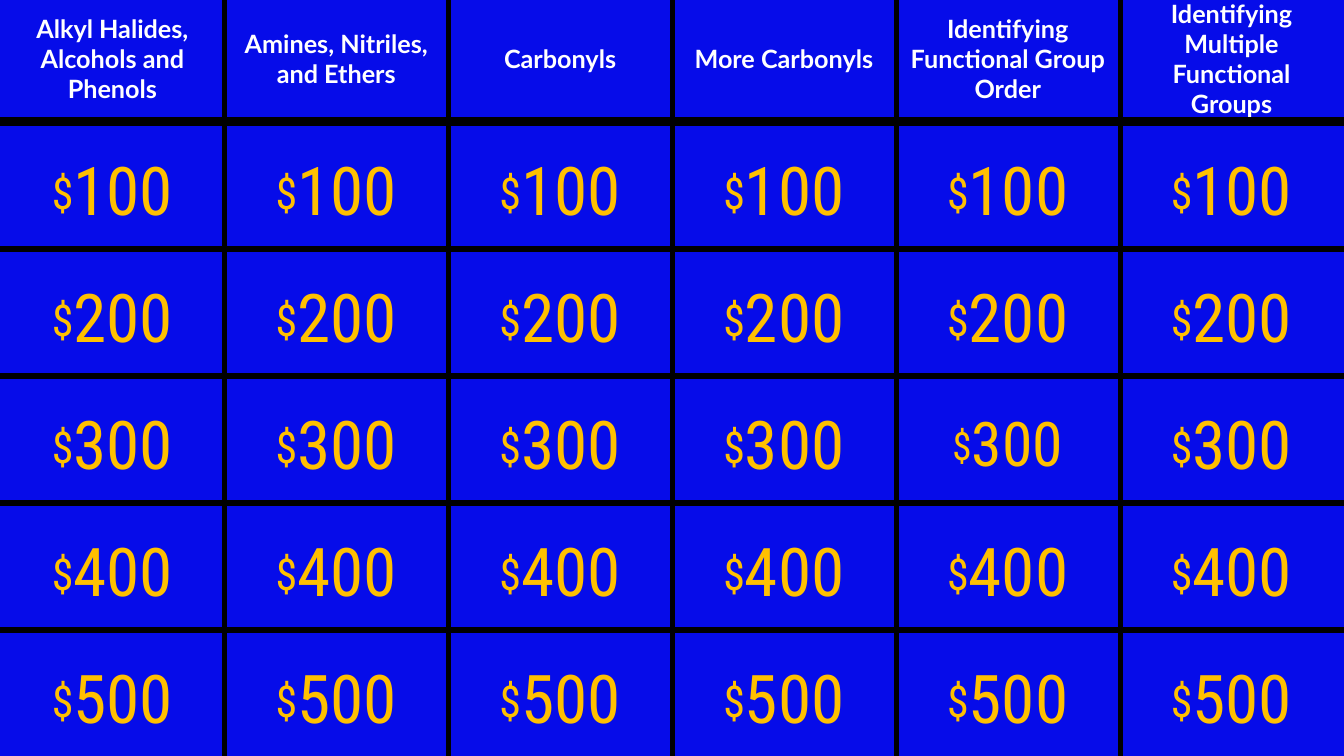
from dataclasses import dataclass

from lxml import etree
from pptx import Presentation
from pptx.dml.color import RGBColor
from pptx.enum.shapes import MSO_CONNECTOR, MSO_SHAPE
from pptx.enum.text import MSO_ANCHOR, PP_ALIGN
from pptx.oxml.ns import qn
from pptx.util import Inches, Pt

RECT = MSO_SHAPE.RECTANGLE
STRAIGHT = MSO_CONNECTOR.STRAIGHT
MIDDLE = MSO_ANCHOR.MIDDLE
CENTER = PP_ALIGN.CENTER


@dataclass(frozen=True)
class Theme:
    board: RGBColor = RGBColor(0x06, 0x0C, 0xE9)
    gold: RGBColor = RGBColor(0xFF, 0xC0, 0x00)
    white: RGBColor = RGBColor(0xFF, 0xFF, 0xFF)
    black: RGBColor = RGBColor(0, 0, 0)
    category_font: str = "Lato"
    value_font: str = "Roboto Condensed"
    category_size: float = 18
    value_sizes: tuple = (54, 48)  # dollar sign, number
    small_value_sizes: tuple = (48, 44)
    dollar_raise: int = 8  # percent
    column_rule: float = 3.5
    row_rule: float = 4
    header_rule: float = 6.5


THEME = Theme()

# Board grid, in inches
SLIDE_W, SLIDE_H = 13.33, 7.5
LEFT, TOP = 0.01, -0.05
COL_PITCH, ROW_PITCH = 2.22, 1.26
CELL_W, CELL_H = 2.21, 1.26
BLEED = 0.1  # how far the rules run past the right and bottom edges

CATEGORIES = [
    "Alkyl Halides, Alcohols and Phenols",
    "Amines, Nitriles, and Ethers",
    "Carbonyls",
    "More Carbonyls",
    "Identifying Functional Group Order",
    "Identifying Multiple Functional Groups",
]
VALUES = [100, 200, 300, 400, 500]
SMALL_CELL = (4, 3)  # column and row of the cell in smaller type


def col_x(col):
    return LEFT + col * COL_PITCH


def row_y(row):
    return TOP + row * ROW_PITCH


def add_cell(s, col, row):
    """Add a blue board cell and return its centred paragraph."""
    sp = s.shapes.add_shape(RECT, Inches(col_x(col)), Inches(row_y(row)),
                            Inches(CELL_W), Inches(CELL_H))
    sp.shadow.inherit = False
    sp.fill.solid()
    sp.fill.fore_color.rgb = THEME.board
    sp.line.fill.background()
    tf = sp.text_frame
    tf.word_wrap = True
    tf.vertical_anchor = MIDDLE
    p = tf.paragraphs[0]
    p.alignment = CENTER
    return p


def add_run(p, text, font, size, color, bold=False, raised=0):
    r = p.add_run()
    r.text = text
    r.font.name = font
    r.font.size = Pt(size)
    r.font.bold = bold
    r.font.color.rgb = color
    if raised:
        r.font._element.set("baseline", str(raised * 1000))


def add_category(s, col, text):
    add_run(add_cell(s, col, 0), text, THEME.category_font,
            THEME.category_size, THEME.white, bold=True)


def add_value(s, col, row, value):
    small = (col, row) == SMALL_CELL
    dollar, number = THEME.small_value_sizes if small else THEME.value_sizes
    p = add_cell(s, col, row)
    add_run(p, "$", THEME.value_font, dollar, THEME.gold,
            raised=THEME.dollar_raise)
    add_run(p, str(value), THEME.value_font, number, THEME.gold)


def add_rule(s, x1, y1, x2, y2, width):
    line = s.shapes.add_connector(STRAIGHT, Inches(x1), Inches(y1),
                                  Inches(x2), Inches(y2))
    line.line.color.rgb = THEME.black
    line.line.width = Pt(width)
    etree.SubElement(line._element.spPr, qn("a:effectLst"))


def main():
    prs = Presentation()
    prs.slide_width, prs.slide_height = Inches(SLIDE_W), Inches(SLIDE_H)
    s = prs.slides.add_slide(prs.slide_layouts[6])
    s.background.fill.solid()
    s.background.fill.fore_color.rgb = THEME.board

    # Category headings and dollar values
    for col, category in enumerate(CATEGORIES):
        add_category(s, col, category)
        for row, value in enumerate(VALUES, start=1):
            add_value(s, col, row, value)

    # Rules between rows, the heaviest under the headings
    for row in range(1, len(VALUES) + 1):
        width = THEME.header_rule if row == 1 else THEME.row_rule
        add_rule(s, 0, row_y(row), SLIDE_W + BLEED, row_y(row), width)

    # Rules between columns
    for col in range(1, len(CATEGORIES)):
        add_rule(s, col_x(col), TOP, col_x(col), SLIDE_H + BLEED,
                 THEME.column_rule)

    prs.save("out.pptx")


if __name__ == "__main__":
    main()
